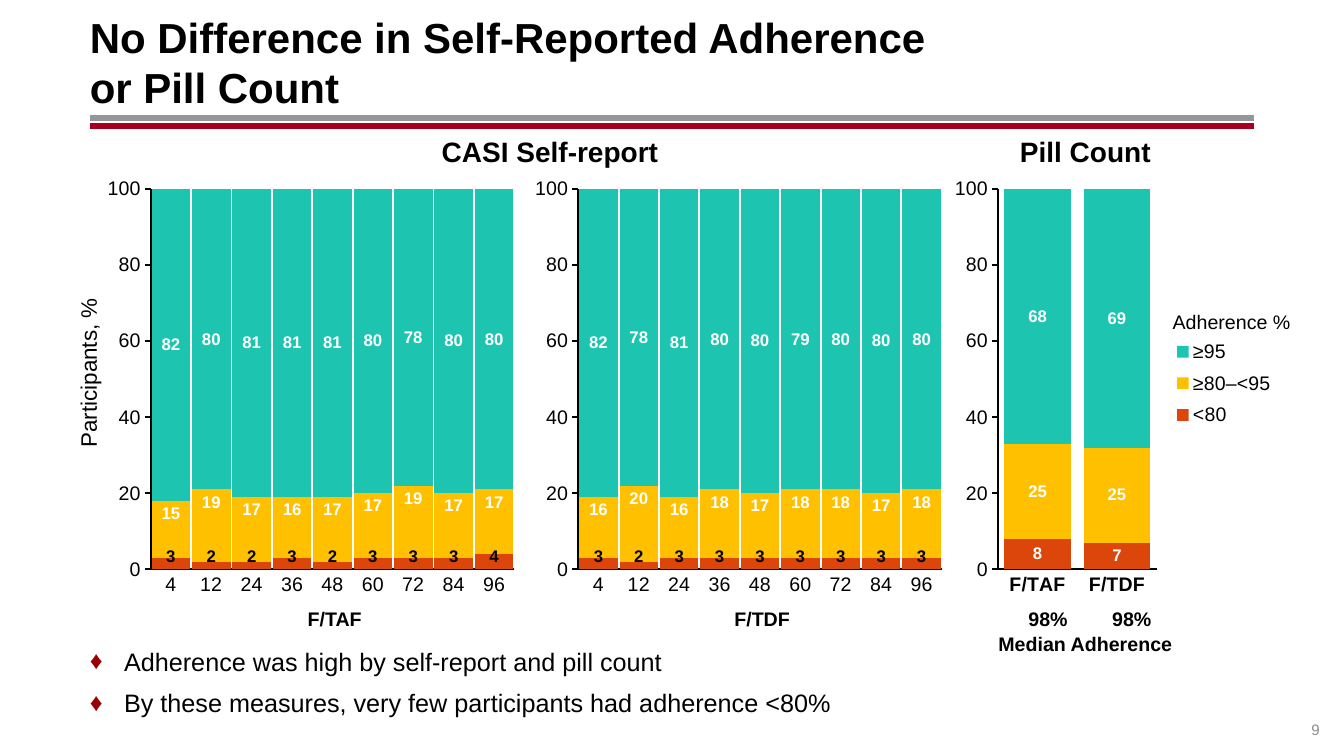
from pptx import Presentation
from pptx.chart.data import CategoryChartData
from pptx.dml.color import RGBColor
from pptx.enum.chart import XL_CHART_TYPE as ChartType, XL_LABEL_POSITION as LabelPos
from pptx.enum.chart import XL_LEGEND_POSITION as LegendPos, XL_TICK_MARK as Tick
from pptx.enum.shapes import MSO_CONNECTOR as Connector
from pptx.enum.text import MSO_ANCHOR as Anchor, MSO_AUTO_SIZE as AutoSize, PP_ALIGN as Align
from pptx.oxml.ns import qn
from pptx.util import Inches, Pt
from lxml.etree import SubElement, Element

# Content
TITLE = "No Difference in Self-Reported Adherence\vor Pill Count"
FINDINGS = [
    "Adherence was high by self-report and pill count",
    "By these measures, very few participants had adherence <80%",
]
LEVELS = ["<80", "≥80–<95", "≥95"]
WEEKS = ["4", "12", "24", "36", "48", "60", "72", "84", "96"]
CASI = {
    "F/TAF": [
        [3, 2, 2, 3, 2, 3, 3, 3, 4],
        [15, 19, 17, 16, 17, 17, 19, 17, 17],
        [82, 80, 81, 81, 81, 80, 78, 80, 80],
    ],
    "F/TDF": [
        [3, 2, 3, 3, 3, 3, 3, 3, 3],
        [16, 20, 16, 18, 17, 18, 18, 17, 18],
        [82, 78, 81, 80, 80, 79, 80, 80, 80],
    ],
}
PILL_COUNT = [[8, 7], [25, 25], [68, 69]]
MEDIANS = ["98%", "98%"]

THEME = {
    "font": "Arial", "ink": "000000", "inverse": "FFFFFF", "muted": "8C8C8C",
    "rules": ["969696", "A50021"], "bullet": "990000",
    "levels": ["DC460B", "FFC000", "1DC5B1"],
    "title": 30, "heading": 20, "body": 18, "axis_title": 16,
    "label": 14, "value": 12, "number": 10.8, "rule": 4.25, "axis": 1.25,
}

# Layout in inches
LEFT, WIDTH = 0.89, 11.55
CHART_TOP, CHART_HEIGHT = 1.73, 4.32
CASI_LEFT, CASI_WIDTH, CASI_STEP = 0.98, 4.13, 4.24
PILL_LEFT, PILL_WIDTH = 9.47, 3.27
PLOT_X, PLOT_Y, PLOT_H = 0.125, 0.034, 0.873
CAPTION_TOP, CAPTION_INSET, CAPTION_WIDTH = 6.05, 1.94, 0.8


def assign(target, values):
    for name, value in values.items():
        setattr(target, name, value)


def style(font, size, color="ink", bold=False):
    assign(font, {"name": THEME["font"], "size": Pt(THEME[size]), "bold": bold})
    font.color.rgb = RGBColor.from_string(THEME[color])


def place(shape, left, top, width, height):
    assign(shape, {"left": Inches(left), "top": Inches(top),
                   "width": Inches(width), "height": Inches(height)})


def add_label(text, box, size="label", color="ink", bold=True,
              align=Align.CENTER, anchor=Anchor.TOP, spacing=0.9, rotation=0):
    label = slide.shapes.add_textbox(*map(Inches, box))
    label.rotation = rotation
    frame = label.text_frame
    assign(frame, {"margin_left": 0, "margin_right": 0, "margin_top": 0,
                   "margin_bottom": 0, "word_wrap": False, "vertical_anchor": anchor})
    paragraph = frame.paragraphs[0]
    assign(paragraph, {"text": text, "alignment": align, "line_spacing": spacing})
    style(paragraph.runs[0].font, size, color, bold)


def set_layout(part, index, inner, **fractions):
    for old in part.findall(qn("c:layout")):
        part.remove(old)
    layout = Element(qn("c:layout"))
    part.insert(index, layout)
    manual = SubElement(layout, qn("c:manualLayout"))
    settings = {"layoutTarget": "inner"} if inner else {}
    settings.update(xMode="edge", yMode="edge", **fractions)
    for name, value in settings.items():
        SubElement(manual, qn("c:" + name)).set("val", str(value))


def add_stack(left, width, categories, names, levels, gap, plot_width,
              bold_categories, label_styles):
    data = CategoryChartData()
    data.categories = categories
    for name, values in zip(names, levels):
        data.add_series(name, values)
    chart = slide.shapes.add_chart(
        ChartType.COLUMN_STACKED, Inches(left), Inches(CHART_TOP),
        Inches(width), Inches(CHART_HEIGHT), data).chart
    assign(chart, {"has_title": False, "has_legend": False})
    style(chart.font, "label")
    for axis, tick, bold in ((chart.category_axis, Tick.NONE, bold_categories),
                             (chart.value_axis, Tick.OUTSIDE, False)):
        assign(axis, {"major_tick_mark": tick, "minor_tick_mark": Tick.NONE,
                      "has_major_gridlines": False})
        style(axis.tick_labels.font, "label", bold=bold)
        axis.format.line.width = Pt(THEME["axis"])
        axis.format.line.color.rgb = RGBColor.from_string(THEME["ink"])
    assign(chart.value_axis, {"minimum_scale": 0, "maximum_scale": 100, "major_unit": 20})
    plot = chart.plots[0]
    assign(plot, {"gap_width": gap, "overlap": 100, "vary_by_categories": False})
    for series, fill, (color, position) in zip(plot.series, THEME["levels"], label_styles):
        series.format.fill.solid()
        series.format.fill.fore_color.rgb = RGBColor.from_string(fill)
        labels = series.data_labels
        assign(labels, {"show_value": True, "number_format": "#,##0",
                        "number_format_is_linked": False, "position": position})
        style(labels.font, "value", color, True)
    set_layout(chart._chartSpace.chart.plotArea, 0, True,
               x=PLOT_X, y=PLOT_Y, w=plot_width, h=PLOT_H)
    return chart


deck = Presentation()
assign(deck, {"slide_width": Inches(13.33), "slide_height": Inches(7.5)})
slide = deck.slides.add_slide(deck.slide_layouts[1])

# Title and findings
title, body = slide.shapes.title, slide.placeholders[1]
place(title, LEFT, 0.18, WIDTH, 0.86)
place(body, LEFT, 6.36, WIDTH, 0.84)
for holder, anchor in ((title, Anchor.MIDDLE), (body, Anchor.TOP)):
    assign(holder.text_frame, {"margin_left": 0, "word_wrap": True,
                               "auto_size": AutoSize.NONE, "vertical_anchor": anchor})
title.text_frame.text = TITLE
heading = title.text_frame.paragraphs[0]
heading.alignment = Align.LEFT
for run in heading.runs:
    style(run.font, "title", bold=True)
body.text_frame.text = "\n".join(FINDINGS)
for finding in body.text_frame.paragraphs:
    finding.space_before = Pt(8.1)
    style(finding.runs[0].font, "body")
    props = finding._p.get_or_add_pPr()
    props.set("marL", str(Inches(0.34)))
    props.set("indent", str(-Inches(0.34)))
    bullet_color = SubElement(props, qn("a:buClr"))
    SubElement(bullet_color, qn("a:srgbClr")).set("val", THEME["bullet"])
    SubElement(props, qn("a:buFont")).set("typeface", THEME["font"])
    SubElement(props, qn("a:buChar")).set("char", "♦")

# Double rule under the title
for row, color in enumerate(THEME["rules"]):
    y = Inches(1.17 + 0.08 * row)
    rule = slide.shapes.add_connector(
        Connector.STRAIGHT, Inches(LEFT), y, Inches(LEFT + WIDTH), y)
    rule.line.width = Pt(THEME["rule"])
    rule.line.color.rgb = RGBColor.from_string(color)
    SubElement(rule._element.spPr, qn("a:effectLst"))

# Self-report charts, one per arm
casi_labels = [("ink", LabelPos.INSIDE_BASE), ("inverse", LabelPos.INSIDE_END),
               ("inverse", LabelPos.CENTER)]
for column, (arm, levels) in enumerate(CASI.items()):
    left = CASI_LEFT + column * CASI_STEP
    add_stack(left, CASI_WIDTH, WEEKS, LEVELS, levels, 5, 1 - PLOT_X, False, casi_labels)
    add_label(arm, (left + CAPTION_INSET, CAPTION_TOP, CAPTION_WIDTH, 0.21))
add_label("CASI Self-report", (4.37, 1.37, 2.17, 0.3), "heading", anchor=Anchor.MIDDLE)
add_label("Participants, %", (0.14, 3.58, 1.5, 0.24), "axis_title", bold=False, rotation=270)

# Pill count chart with legend and medians
pill_chart = add_stack(PILL_LEFT, PILL_WIDTH, list(CASI), LEVELS, PILL_COUNT, 20, 0.485,
                       True, [("inverse", LabelPos.CENTER)] * 3)
pill_chart.has_legend = True
legend = pill_chart.legend
assign(legend, {"position": LegendPos.RIGHT, "include_in_layout": False})
style(legend.font, "label")
set_layout(legend._element, 1, False, x=0.65, y=0.36, w=0.33, h=0.24)
add_label("Pill Count", (10.11, 1.37, 1.31, 0.3), "heading", anchor=Anchor.MIDDLE)
add_label("Adherence %", (11.63, 3.1, 1.18, 0.21), bold=False,
          align=Align.LEFT, anchor=Anchor.MIDDLE)
for column, median in enumerate(MEDIANS):
    add_label(median, (10.2 + 0.83 * column, CAPTION_TOP, 0.39, 0.21))
add_label("Median Adherence", (9.9, 6.3, 1.73, 0.21))

# Slide number
add_label("9", (12.44, 6.93, 0.65, 0.4), "number", "muted", False,
          Align.RIGHT, Anchor.BOTTOM, 1.0)

deck.save("out.pptx")
